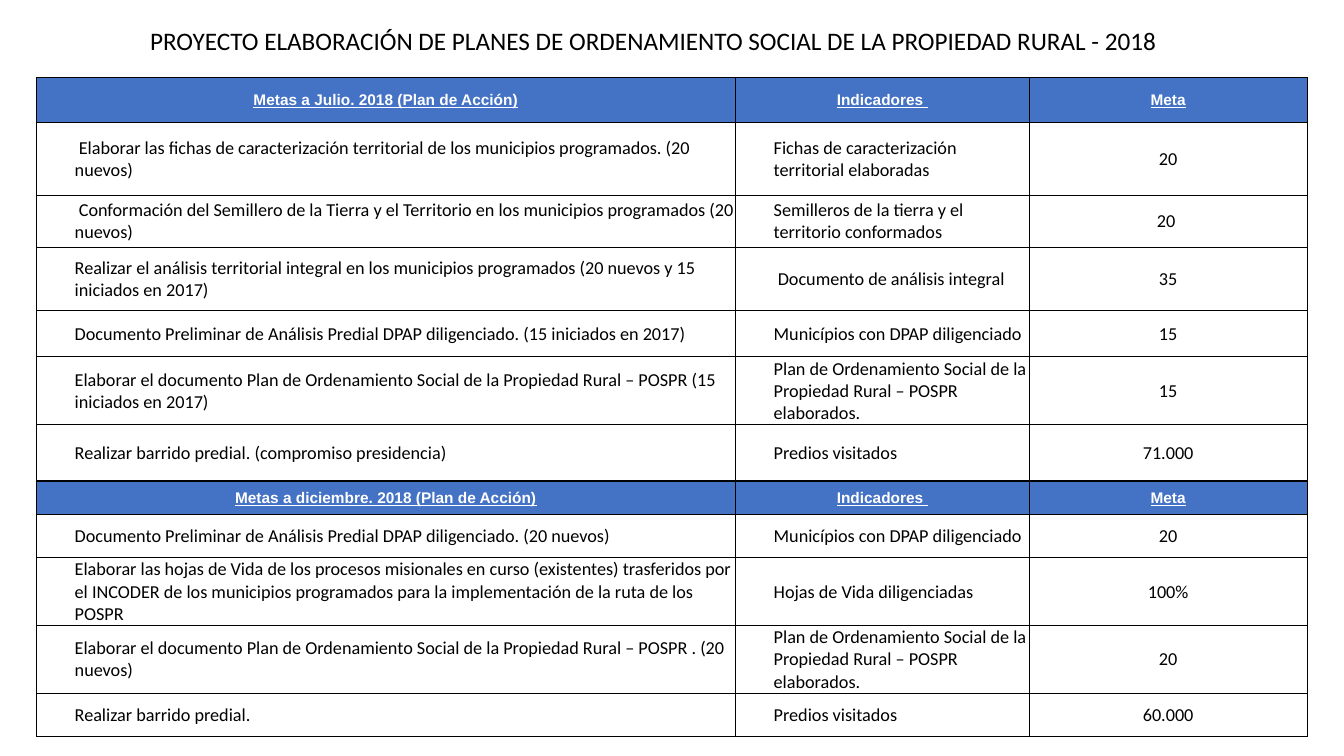
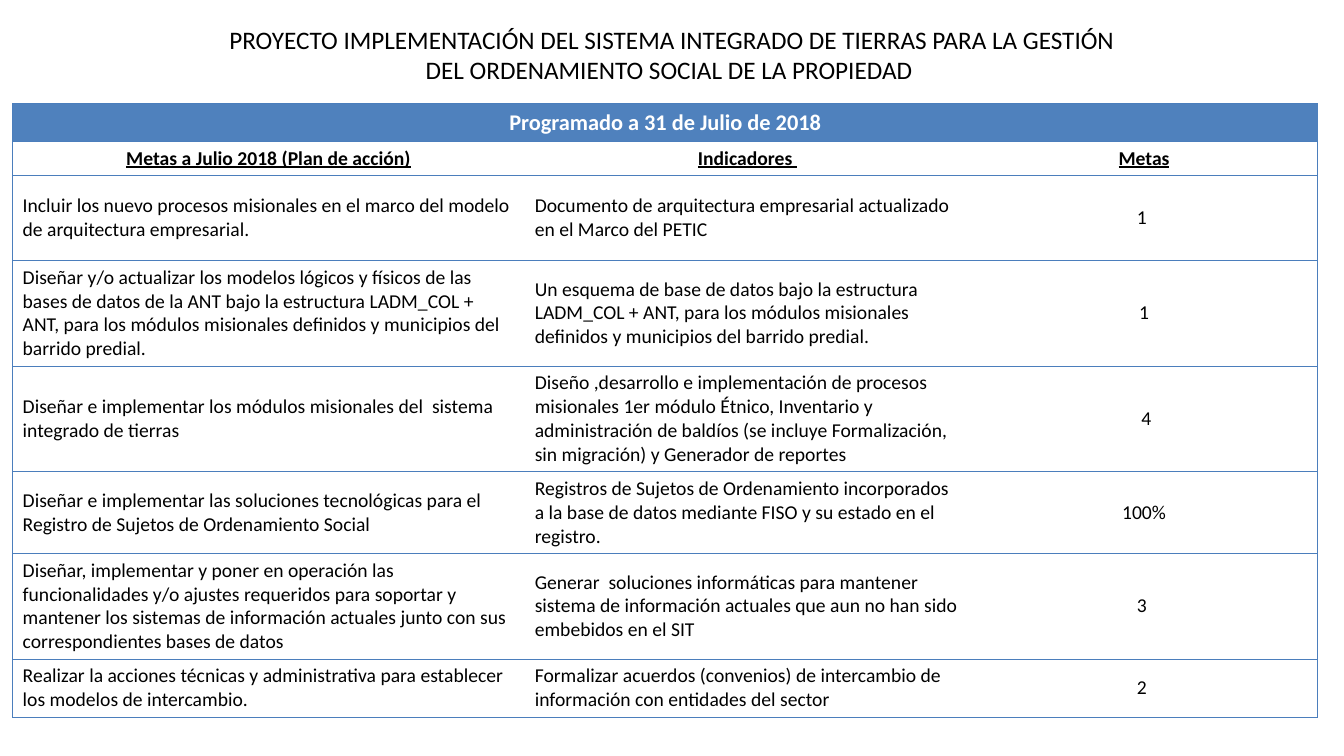
from dataclasses import dataclass

from lxml.etree import SubElement
from pptx import Presentation
from pptx.dml.color import RGBColor
from pptx.enum.text import MSO_ANCHOR, MSO_AUTO_SIZE, PP_ALIGN
from pptx.oxml.ns import qn
from pptx.util import Pt


@dataclass(frozen=True)
class Theme:
    """Colours, fonts and type sizes shared by the slides."""
    black: str = "000000"
    white: str = "FFFFFF"
    plan_blue: str = "4472C4"
    system_blue: str = "4F81BD"
    system_line: str = "4B7EBC"
    body_font: str = "Calibri"
    header_font: str = "Arial"
    title_size: float = 18
    banner_size: float = 16
    system_size: float = 14
    plan_size: float = 13
    plan_header_size: float = 11


@dataclass(frozen=True)
class CellStyle:
    """Type, fill and margins of one kind of cell."""
    size: float
    color: str
    fill: str
    font: str = "Calibri"
    bold: bool = False
    underline: bool = False
    align: PP_ALIGN = PP_ALIGN.LEFT
    anchor: MSO_ANCHOR = MSO_ANCHOR.MIDDLE
    margins: tuple = (7.2, 3.6, 7.2, 3.6)


THEME = Theme()
PLAN_MARGINS = (0.7, 0.7, 0.7, 0)
PLAN_HEADER = CellStyle(THEME.plan_header_size, THEME.white, THEME.plan_blue, THEME.header_font,
                        True, True, PP_ALIGN.CENTER, margins=PLAN_MARGINS)
PLAN_BODY = CellStyle(THEME.plan_size, THEME.black, THEME.white, margins=(27.4, 0.7, 0.7, 0))
PLAN_VALUE = CellStyle(THEME.plan_size, THEME.black, THEME.white, align=PP_ALIGN.CENTER,
                       margins=PLAN_MARGINS)
SYSTEM_BANNER = CellStyle(THEME.banner_size, THEME.white, THEME.system_blue, bold=True,
                          align=PP_ALIGN.CENTER, anchor=MSO_ANCHOR.TOP)
SYSTEM_HEADER = CellStyle(THEME.system_size, THEME.black, THEME.white, bold=True, underline=True,
                          align=PP_ALIGN.CENTER, anchor=MSO_ANCHOR.TOP)
SYSTEM_BODY = CellStyle(THEME.system_size, THEME.black, THEME.white)
SYSTEM_VALUE = CellStyle(THEME.system_size, THEME.black, THEME.white, align=PP_ALIGN.CENTER)

PLAN_COLUMNS = (499.3, 209.8, 198.6)
SYSTEM_COLUMNS = (365.8, 318.2, 248.4)

JULY_HEIGHTS = (31.7, 52, 37.5, 45.2, 32.8, 48.7, 40.1)
JULY_ROWS = (
    ("Metas a Julio. 2018 (Plan de Acción)", "Indicadores ", "Meta"),
    (" Elaborar las fichas de caracterización territorial de los municipios programados. (20 nuevos)",
     "Fichas de caracterización territorial elaboradas", "20"),
    (" Conformación del Semillero de la Tierra y el Territorio en los municipios programados (20 nuevos)",
     "Semilleros de la tierra y el territorio conformados", "20 "),
    ("Realizar el análisis territorial integral en los municipios programados (20 nuevos y 15 iniciados en 2017)",
     " Documento de análisis integral", "35"),
    ("Documento Preliminar de Análisis Predial DPAP diligenciado. (15 iniciados en 2017)",
     "Municípios con DPAP diligenciado", "15"),
    ("Elaborar el documento Plan de Ordenamiento Social de la Propiedad Rural – POSPR (15 iniciados en 2017)",
     "Plan de Ordenamiento Social de la Propiedad Rural – POSPR elaborados.", "15"),
    ("Realizar barrido predial. (compromiso presidencia)", "Predios visitados", "71.000"),
)
DECEMBER_HEIGHTS = (23.8, 31, 48.3, 48.5, 31)
DECEMBER_ROWS = (
    ("Metas a diciembre. 2018 (Plan de Acción)", "Indicadores ", "Meta"),
    ("Documento Preliminar de Análisis Predial DPAP diligenciado. (20 nuevos)",
     "Municípios con DPAP diligenciado", "20"),
    ("Elaborar las hojas de Vida de los procesos misionales en curso (existentes) trasferidos por el INCODER "
     "de los municipios programados para la implementación de la ruta de los POSPR",
     "Hojas de Vida diligenciadas", "100%"),
    ("Elaborar el documento Plan de Ordenamiento Social de la Propiedad Rural – POSPR . (20 nuevos)",
     "Plan de Ordenamiento Social de la Propiedad Rural – POSPR elaborados.", "20"),
    ("Realizar barrido predial.", "Predios visitados", "60.000"),
)
SYSTEM_HEIGHTS = (27, 24.5, 60.5, 75.5, 75, 58.5, 75, 41.5)
SYSTEM_ROWS = (
    ("Programado a 31 de Julio de 2018", "", ""),
    ("Metas a Julio 2018 (Plan de acción)", "Indicadores ", "Metas"),
    ("Incluir los nuevo procesos misionales en el marco del modelo de arquitectura empresarial.",
     "Documento de arquitectura empresarial actualizado en el Marco del PETIC", "1 "),
    ("Diseñar y/o actualizar los modelos lógicos y físicos de las bases de datos de la ANT bajo la estructura "
     "LADM_COL + ANT, para los módulos misionales definidos y municipios del barrido predial.",
     "Un esquema de base de datos bajo la estructura LADM_COL + ANT, para los módulos misionales definidos "
     "y municipios del barrido predial.", "1"),
    ("Diseñar e implementar los módulos misionales del  sistema integrado de tierras",
     "Diseño ,desarrollo e implementación de procesos misionales 1er módulo Étnico, Inventario y "
     "administración de baldíos (se incluye Formalización, sin migración) y Generador de reportes", " 4"),
    ("Diseñar e implementar las soluciones tecnológicas para el Registro de Sujetos de Ordenamiento Social",
     "Registros de Sujetos de Ordenamiento incorporados a la base de datos mediante FISO y su estado "
     "en el registro.", "100%"),
    ("Diseñar, implementar y poner en operación las funcionalidades y/o ajustes requeridos para soportar y "
     "mantener los sistemas de información actuales junto con sus correspondientes bases de datos",
     "Generar  soluciones informáticas para mantener sistema de información actuales que aun no han sido "
     "embebidos en el SIT", "3 "),
    ("Realizar la acciones técnicas y administrativa para establecer los modelos de intercambio.",
     "Formalizar acuerdos (convenios) de intercambio de información con entidades del sector", "2 "),
)


def set_borders(cell, color, widths):
    """Draw the left, right, top and bottom edges; a zero width hides an edge."""
    properties = cell._tc.get_or_add_tcPr()
    for index, (side, width) in enumerate(zip("LRTB", widths)):
        line = SubElement(properties, qn(f"a:ln{side}"), w=str(Pt(width)))
        if width:
            fill = SubElement(line, qn("a:solidFill"))
            SubElement(fill, qn("a:srgbClr"), val=color)
        else:
            SubElement(line, qn("a:noFill"))
        properties.insert(index, line)


def format_cell(cell, text, style):
    """Fill a cell with text in the given style."""
    cell.text = text
    cell.vertical_anchor = style.anchor
    cell.margin_left, cell.margin_top, cell.margin_right, cell.margin_bottom = map(Pt, style.margins)
    cell.fill.solid()
    cell.fill.fore_color.rgb = RGBColor.from_string(style.fill)
    para = cell.text_frame.paragraphs[0]
    para.alignment = style.align
    para.font.name = style.font
    para.font.size = Pt(style.size)
    para.font.bold = style.bold
    para.font.underline = style.underline
    para.font.color.rgb = RGBColor.from_string(style.color)


def add_grid(page, left, top, columns, heights, rows, style_at, line_color, widths_at):
    """Add a table whose styles and edges follow from row and column."""
    frame = page.shapes.add_table(len(rows), len(columns), Pt(left), Pt(top),
                                  Pt(sum(columns)), Pt(sum(heights)))
    table = frame.table
    table.first_row = table.horz_banding = False
    for column, width in zip(table.columns, columns):
        column.width = Pt(width)
    for row, height in zip(table.rows, heights):
        row.height = Pt(height)
    for row, texts in enumerate(rows):
        for column, text in enumerate(texts):
            cell = table.cell(row, column)
            format_cell(cell, text, style_at(row, column))
            set_borders(cell, line_color, widths_at(row, column))
    return table


def plan_style(row, column):
    """Choose the style of a plan cell."""
    if row == 0:
        return PLAN_HEADER
    return PLAN_VALUE if column == 2 else PLAN_BODY


def plan_widths(row, column):
    """Give heavier edges to the header and the outer sides."""
    return (1 if column == 0 else 0.5, 1 if column == 2 else 0.5,
            1 if row < 2 else 0.5, 1 if row == 0 else 0.5)


def system_style(row, column):
    """Choose the style of a system cell."""
    if row < 2:
        return (SYSTEM_BANNER, SYSTEM_HEADER)[row]
    return SYSTEM_VALUE if column == 2 else SYSTEM_BODY


def system_widths(row, column):
    """Rule between rows and around the table, not between columns."""
    return (0.75 if column == 0 else 0, 0.75 if column == 2 else 0, 0.75, 0.75)


def add_page(deck, text, left, top, width, height, align):
    """Add a title-only slide with its title set in the given box."""
    page = deck.slides.add_slide(deck.slide_layouts[5])
    title = page.shapes.title
    title.left, title.top, title.width, title.height = map(Pt, (left, top, width, height))
    frame = title.text_frame
    frame.text = text
    frame.word_wrap = True
    frame.auto_size = MSO_AUTO_SIZE.NONE
    frame.vertical_anchor = MSO_ANCHOR.MIDDLE
    para = frame.paragraphs[0]
    para.alignment = align
    para.font.name = THEME.body_font
    para.font.size = Pt(THEME.title_size)
    para.font.color.rgb = RGBColor.from_string(THEME.black)
    return page


def add_plan_slide(deck):
    """Build the slide with the July and December goals."""
    page = add_page(deck, "PROYECTO ELABORACIÓN DE PLANES DE ORDENAMIENTO SOCIAL DE LA PROPIEDAD RURAL - 2018",
                    100, 14.5, 750, 29, PP_ALIGN.LEFT)
    top = 55.6
    for heights, rows in ((JULY_HEIGHTS, JULY_ROWS), (DECEMBER_HEIGHTS, DECEMBER_ROWS)):
        add_grid(page, 26, top, PLAN_COLUMNS, heights, rows, plan_style, THEME.black, plan_widths)
        top += sum(heights)


def add_system_slide(deck):
    """Build the slide with the goals of the land system."""
    page = add_page(deck, "PROYECTO IMPLEMENTACIÓN DEL SISTEMA INTEGRADO DE TIERRAS PARA LA GESTIÓN\v"
                    "DEL ORDENAMIENTO SOCIAL DE LA PROPIEDAD ", 48, 13, 864, 52, PP_ALIGN.CENTER)
    table = add_grid(page, 9, 74, SYSTEM_COLUMNS, SYSTEM_HEIGHTS, SYSTEM_ROWS,
                     system_style, THEME.system_line, system_widths)
    table.cell(0, 0).merge(table.cell(0, 2))


def main():
    """Build and save the deck."""
    deck = Presentation()
    deck.slide_width, deck.slide_height = Pt(960), Pt(540)
    add_plan_slide(deck)
    add_system_slide(deck)
    deck.save("out.pptx")


if __name__ == "__main__":
    main()
